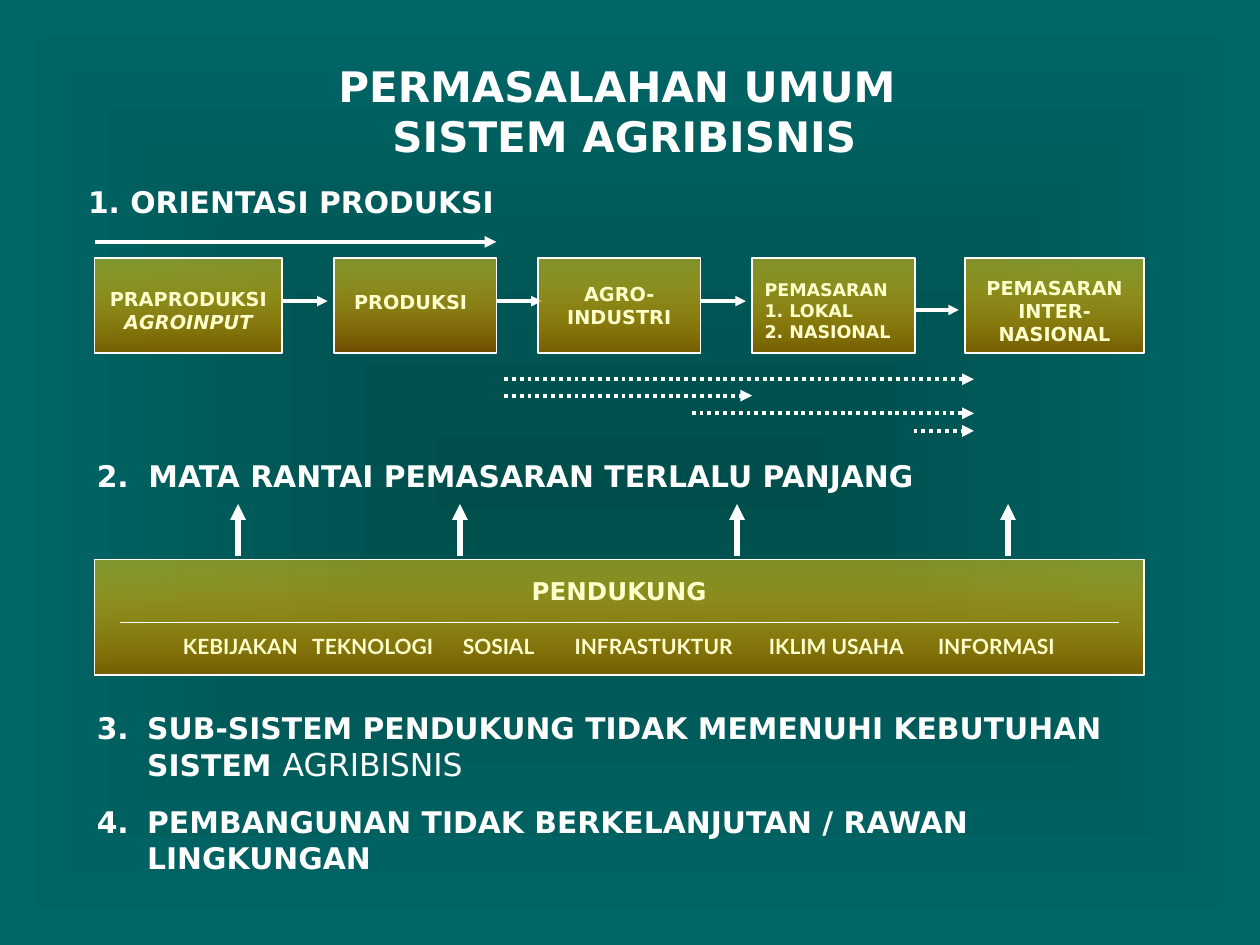
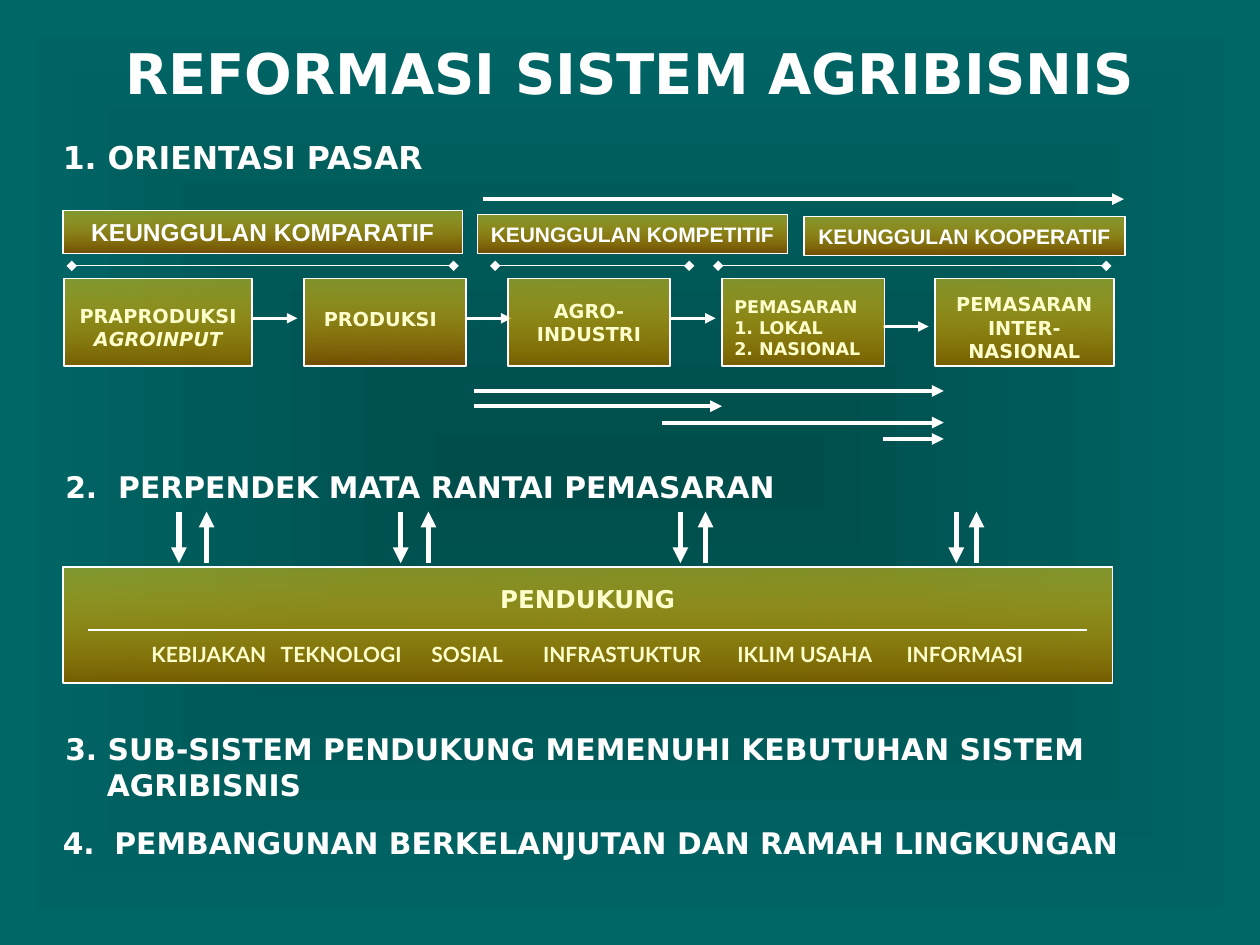
from lxml.etree import SubElement
from pptx import Presentation
from pptx.dml.color import RGBColor
from pptx.enum.dml import MSO_LINE
from pptx.enum.shapes import MSO_CONNECTOR, MSO_SHAPE
from pptx.enum.text import MSO_ANCHOR as ANCHOR, PP_ALIGN as ALIGN
from pptx.oxml.ns import qn
from pptx.util import Inches, Pt

COLORS = {
    "white": "FFFFFF",
    "cream": "FFFFCC",
    "gold": "FFCC00",
    "olive": "765E00",
    "brown": "724C00",
    "deep_teal": "004E4C",
    "teal": "006666",
}
FONT = "DejaVu Sans"

STAGES = [
    {"left": 0, "width": 1.49, "lines": ["PRAPRODUKSI", "AGROINPUT"], "italic": "AGROINPUT", "shift": 0.04},
    {"left": 1.9, "width": 1.29, "lines": ["PRODUKSI"], "indent": 0.16, "end": "brown", "shift": -0.03},
    {"left": 3.52, "width": 1.29, "lines": ["AGRO-", "INDUSTRI"]},
    {"left": 5.22, "width": 1.29, "lines": ["PEMASARAN", "1. LOKAL", "2. NASIONAL"],
     "indent": 0.1, "size": 10, "shift": 0.04},
    {"left": 6.91, "width": 1.42, "lines": ["PEMASARAN", "INTER-", "NASIONAL"], "shift": 0.04},
]
STAGE_HEIGHT = 0.75
STAGE_ARROWS = [(1.49, 0.34), (3.19, 0.34), (4.81, 0.34), (6.5, 0.41)]
MARKET_CHAINS = [(3.25, 6.98, 0.96), (3.25, 5.22, 1.09), (4.74, 6.98, 1.23), (6.5, 6.98, 1.37)]

SUPPORTS = [("KEBIJAKAN", 1.16), ("TEKNOLOGI", 2.21), ("SOSIAL", 3.21),
            ("INFRASTUKTUR", 4.44), ("IKLIM USAHA", 5.89), ("INFORMASI", 7.16)]
UP_ARROWS = [1.14, 2.9, 5.1, 7.25]
DOWN_ARROWS = [0.92, 2.68, 4.9, 7.09]

ADVANTAGES = [
    ("KEUNGGULAN KOMPARATIF", (0.5, 1.67, 3.17, 0.34), 14, (0.57, 3.6)),
    ("KEUNGGULAN KOMPETITIF", (3.79, 1.7, 2.46, 0.31), 12, (3.93, 5.47)),
    ("KEUNGGULAN KOOPERATIF", (6.38, 1.72, 2.55, 0.31), 12, (5.7, 8.78)),
]

SLIDES = [
    {
        "title": (["PERMASALAHAN UMUM ", "SISTEM AGRIBISNIS"], (0.42, 0.42, 9.07, 0.92), 24),
        "headings": [
            ((0.6, 1.41, 8.08, 0.38), 0, [("1. ORIENTASI PRODUKSI", 17, True)]),
            ((0.67, 3.58, 7.2, 0.38), 0.41, [("2.\tMATA RANTAI PEMASARAN TERLALU PANJANG", 17, True)]),
            ((0.67, 5.58, 8.83, 0.68), 0.4, [
                ("3.\tSUB-SISTEM PENDUKUNG TIDAK MEMENUHI KEBUTUHAN SISTEM", 17, True),
                (" ", 18, True), ("AGRIBISNIS", 18, False)]),
            ((0.67, 6.33, 8.5, 0.67), 0.4,
             [("4.\tPEMBANGUNAN TIDAK BERKELANJUTAN / RAWAN LINGKUNGAN", 17, True)]),
        ],
        "orientation": (0.75, 3.94, 1.92),
        "flow": (0.75, 2.05, 1, MSO_LINE.ROUND_DOT),
        "support": (0.75, 4.44, []),
        "advantages": [],
    },
    {
        "title": (["REFORMASI SISTEM AGRIBISNIS"], (0.25, 0.22, 9.5, 0.7), 32),
        "headings": [
            ((0.4, 1.05, 4.98, 0.4), 0, [("1. ORIENTASI PASAR", 18, True)]),
            ((0.42, 3.67, 6.5, 0.38), 0.42, [("2.\tPERPENDEK MATA RANTAI PEMASARAN", 17, True)]),
            ((0.42, 5.75, 8.67, 0.67), 0.33,
             [("3. SUB-SISTEM PENDUKUNG MEMENUHI KEBUTUHAN SISTEM AGRIBISNIS", 17, True)]),
            ((0.4, 6.5, 9.33, 0.38), 0.41,
             [("4.\tPEMBANGUNAN BERKELANJUTAN DAN RAMAH LINGKUNGAN", 17, True)]),
        ],
        "orientation": (3.83, 8.92, 1.58),
        "flow": (0.51, 2.21, 0.93, None),
        "support": (0.5, 4.5, DOWN_ARROWS),
        "advantages": ADVANTAGES,
    },
]


def rgb(name):
    return RGBColor.from_string(COLORS[name])


def add_run(paragraph, text, size, color="white", font=FONT, bold=True, italic=False):
    run = paragraph.add_run()
    run.text = text
    run.font.size, run.font.name = Pt(size), font
    run.font.bold, run.font.italic = bold, italic
    run.font.color.rgb = rgb(color)


def next_paragraph(frame, index):
    return frame.add_paragraph() if index else frame.paragraphs[0]


def set_stops(fill, colors):
    for stop, color, position in zip(fill.gradient_stops, colors, (0, 1)):
        stop.color.rgb = rgb(color)
        stop.position = position


def set_background(master):
    fill = master.background.fill
    fill.gradient()
    set_stops(fill, ("deep_teal", "teal"))
    gradient = next(master.element.iter(qn("a:gradFill")))
    gradient.remove(gradient.find(qn("a:lin")))
    shade = SubElement(gradient, qn("a:path"), {"path": "shape"})
    SubElement(shade, qn("a:fillToRect"), dict.fromkeys("ltrb", "50000"))


def add_text_box(slide, place):
    frame = slide.shapes.add_textbox(*map(Inches, place)).text_frame
    frame.word_wrap = True
    return frame


def add_gold_box(slide, place, end="olive", line_width=1):
    shape = slide.shapes.add_shape(MSO_SHAPE.RECTANGLE, *map(Inches, place))
    shape.shadow.inherit = False
    shape.fill.gradient()
    shape.fill.gradient_angle = 270
    set_stops(shape.fill, ("gold", end))
    first_color = next(shape.element.spPr.iter(qn("a:srgbClr")))
    SubElement(first_color, qn("a:alpha"), {"val": "50000"})
    shape.line.color.rgb = rgb("white")
    shape.line.width = Pt(line_width)
    shape.text_frame.vertical_anchor = ANCHOR.MIDDLE
    return shape


def add_line(slide, start, end, width, head=None, tail="triangle", dash=None):
    connector = slide.shapes.add_connector(MSO_CONNECTOR.STRAIGHT, *map(Inches, start + end))
    connector.line.color.rgb = rgb("white")
    connector.line.width = Pt(width)
    if dash:
        connector.line.dash_style = dash
    properties = connector.element.spPr
    outline = properties.find(qn("a:ln"))
    for tag, kind in (("a:headEnd", head), ("a:tailEnd", tail)):
        if kind:
            SubElement(outline, qn(tag), {"type": kind})
    SubElement(properties, qn("a:effectLst"))


def add_title(slide, lines, place, size):
    frame = add_text_box(slide, place)
    frame.vertical_anchor = ANCHOR.MIDDLE
    paragraph = frame.paragraphs[0]
    paragraph.alignment = ALIGN.CENTER
    for index, line in enumerate(lines):
        if index:
            paragraph.add_line_break()
        add_run(paragraph, line, size)


def add_heading(slide, place, hang, runs):
    paragraph = add_text_box(slide, place).paragraphs[0]
    if hang:
        properties = paragraph._p.get_or_add_pPr()
        properties.set("marL", str(Inches(hang)))
        properties.set("indent", str(-Inches(hang)))
    for text, size, bold in runs:
        add_run(paragraph, text, size, bold=bold)


def add_stage(slide, stage, left, top, height):
    place = (left + stage["left"], top, stage["width"], height)
    frame = add_gold_box(slide, place, stage.get("end", "olive")).text_frame
    frame.word_wrap = True
    shift = stage.get("shift", 0)
    frame.margin_top = Inches(max(2 * shift, 0))
    frame.margin_bottom = Inches(max(-2 * shift, 0))
    frame.margin_left = Inches(stage.get("indent", 0.05))
    frame.margin_right = Inches(0.05)
    for index, line in enumerate(stage["lines"]):
        paragraph = next_paragraph(frame, index)
        paragraph.alignment = ALIGN.LEFT if "indent" in stage else ALIGN.CENTER
        add_run(paragraph, line, stage.get("size", 11), "cream", italic=line == stage.get("italic"))


def add_flow(slide, left, top, scale, dash):
    for start, offset in STAGE_ARROWS:
        y = top + offset * scale
        add_line(slide, (left + start, y), (left + start + 0.36, y), 2)
    for stage in STAGES:
        add_stage(slide, stage, left, top, STAGE_HEIGHT * scale)
    for start, end, offset in MARKET_CHAINS:
        y = top + offset * scale
        add_line(slide, (left + start, y), (left + end, y), 2.25, dash=dash)


def add_support(slide, left, top, down_arrows):
    frame = add_gold_box(slide, (left, top, 8.33, 0.92)).text_frame
    frame.word_wrap = True
    heading = frame.paragraphs[0]
    heading.alignment = ALIGN.CENTER
    add_run(heading, "PENDUKUNG", 14, "cream")
    labels = frame.add_paragraph()
    labels.alignment = ALIGN.LEFT
    labels.space_before = Pt(16)
    tabs = SubElement(labels._p.get_or_add_pPr(), qn("a:tabLst"))
    for name, center in SUPPORTS:
        SubElement(tabs, qn("a:tab"), {"pos": str(Inches(center - 0.1)), "algn": "ctr"})
        add_run(labels, "\t" + name, 12, "cream", "Lato")
    add_line(slide, (left + 0.2, top + 0.5), (left + 8.13, top + 0.5), 1, tail=None)
    high, low = top - 0.44, top - 0.03
    for x in UP_ARROWS:
        add_line(slide, (left + x, low), (left + x, high), 3)
    for x in down_arrows:
        add_line(slide, (left + x, high), (left + x, low), 3)


def add_advantage(slide, text, place, size, span):
    frame = add_gold_box(slide, place, "brown", 0.75).text_frame
    frame.word_wrap = False
    paragraph = frame.paragraphs[0]
    paragraph.alignment = ALIGN.CENTER
    add_run(paragraph, text, size, font="Arial")
    start, end = span
    add_line(slide, (start, 2.11), (end, 2.11), 0.75, "diamond", "diamond")


def main():
    presentation = Presentation()
    presentation.slide_width, presentation.slide_height = Inches(10), Inches(7.5)
    set_background(presentation.slide_master)
    for content in SLIDES:
        slide = presentation.slides.add_slide(presentation.slide_layouts[6])
        add_title(slide, *content["title"])
        for heading in content["headings"]:
            add_heading(slide, *heading)
        start, end, y = content["orientation"]
        add_line(slide, (start, y), (end, y), 2.25)
        for advantage in content["advantages"]:
            add_advantage(slide, *advantage)
        add_flow(slide, *content["flow"])
        add_support(slide, *content["support"])
    presentation.save("out.pptx")


if __name__ == "__main__":
    main()
